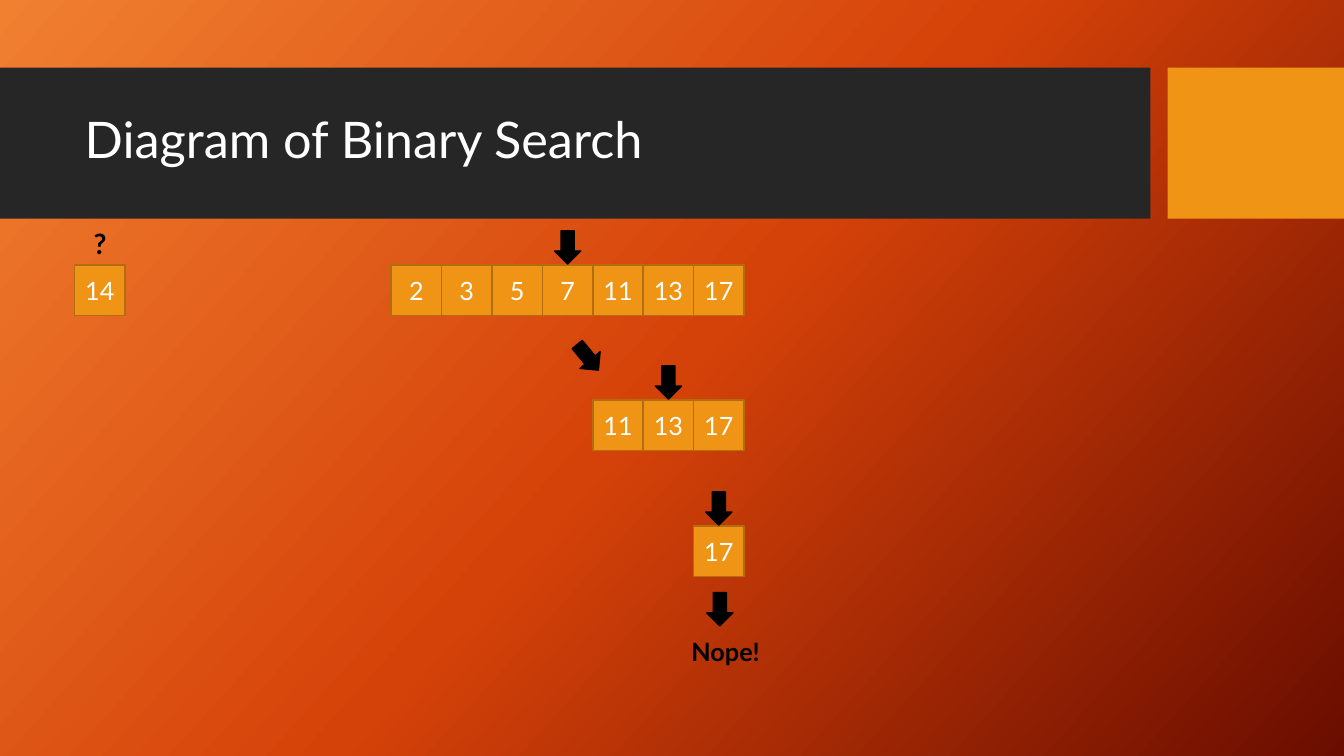
from copy import deepcopy

from pptx import Presentation
from pptx import util as u
from pptx.dml.color import RGBColor
from pptx.enum import shapes, text

PX = 9144
CELL = 50
ARRAY_LEFT = 388
FONT = "Lato"
WHITE = RGBColor(0xFF, 0xFF, 0xFF)
BLACK = RGBColor(0, 0, 0)
BAND = RGBColor(0x26, 0x26, 0x26)
ORANGE = RGBColor(0xF0, 0x94, 0x15)
CELL_EDGE = RGBColor(0xB2, 0x6D, 0x10)
GRADIENT = [
    (0, RGBColor(0xF1, 0x80, 0x31)),
    (0.5, RGBColor(0xD5, 0x42, 0x09)),
    (1, RGBColor(0x6A, 0x0D, 0x00)),
]
VALUES = [2, 3, 5, 7, 11, 13, 17]


def px(*lengths):
    """Turn pixel lengths into EMU."""
    return [u.Emu(length * PX) for length in lengths]


def paint_background(page):
    """Fill the page with the diagonal three-stop gradient."""
    fill = page.background.fill
    fill.gradient()
    fill.gradient_angle = 318
    stop_list = page.element.xpath(".//a:gsLst")[0]
    stop_list.append(deepcopy(stop_list[-1]))
    for stop, (position, color) in zip(fill.gradient_stops, GRADIENT):
        stop.position = position
        stop.color.rgb = color


def write(box, words, size=18, color=WHITE, bold=False, align=text.PP_ALIGN.LEFT,
          anchor=text.MSO_ANCHOR.TOP, wrap=True, spacing=None):
    """Put one formatted paragraph into a box."""
    frame = box.text_frame
    frame.word_wrap = wrap
    frame.auto_size = text.MSO_AUTO_SIZE.NONE
    frame.vertical_anchor = anchor
    para = frame.paragraphs[0]
    para.alignment = align
    para.line_spacing = spacing
    span = para.add_run()
    span.text = words
    span.font.name = FONT
    span.font.size = u.Pt(size)
    span.font.bold = bold
    span.font.color.rgb = color


def add_block(page, kind, left, top, width, height, fill, edge=None):
    """Draw a filled preset shape, outlined if an edge colour is given."""
    box = page.shapes.add_shape(kind, *px(left, top, width, height))
    box.shadow.inherit = False
    box.fill.solid()
    box.fill.fore_color.rgb = fill
    if edge is None:
        box.line.fill.background()
    else:
        box.line.color.rgb = edge
        box.line.width = u.Pt(1)
    return box


def add_cell(page, left, top, value):
    """Draw one numbered square."""
    box = add_block(page, shapes.MSO_SHAPE.RECTANGLE, left, top, CELL, CELL,
                    ORANGE, CELL_EDGE)
    frame = box.text_frame
    frame.margin_left = frame.margin_right = 0
    write(box, str(value), align=text.PP_ALIGN.CENTER,
          anchor=text.MSO_ANCHOR.MIDDLE)


def add_arrow(page, left, top, rotation=0):
    """Draw a black block arrow that points down before rotation."""
    arrow = add_block(page, shapes.MSO_SHAPE.DOWN_ARROW, left, top, 26, 33,
                      BLACK, BLACK)
    arrow.rotation = rotation


def add_search_step(page, first, top):
    """Draw the remaining values and mark the middle one."""
    for index in range(first, len(VALUES)):
        add_cell(page, ARRAY_LEFT + index * CELL, top, VALUES[index])
    middle = (first + len(VALUES) - 1) // 2
    add_arrow(page, ARRAY_LEFT + middle * CELL + 12, top - 34)


def add_label(page, left, top, width, height, words, **look):
    """Add a bold black text label."""
    box = page.shapes.add_textbox(*px(left, top, width, height))
    write(box, words, color=BLACK, bold=True, **look)


def add_title(page, words):
    """Draw the title bars and set the title on top of them."""
    for left, width, color in [(0, 1141, BAND), (1158, 175, ORANGE)]:
        add_block(page, shapes.MSO_SHAPE.RECTANGLE, left, 67, width, 150, color)
    title = page.shapes.title
    title.left, title.top, title.width, title.height = px(74, 82, 1051, 118)
    title.element.getparent().append(title.element)
    write(title, words, size=36, anchor=text.MSO_ANCHOR.MIDDLE, spacing=0.9)


def main():
    """Build the binary search slide."""
    deck = Presentation()
    deck.slide_width, deck.slide_height = px(1333, 750)
    page = deck.slides.add_slide(deck.slide_layouts[5])
    paint_background(page)
    add_title(page, "Diagram of Binary Search")
    add_label(page, 83, 220, 32, 44, "?", size=20, wrap=False)
    add_cell(page, 74, 263, 14)
    for first, top in [(0, 263), (4, 397), (6, 522)]:
        add_search_step(page, first, top)
    add_arrow(page, 570, 338, rotation=320.4)
    add_arrow(page, 701, 588)
    add_label(page, 676, 626, 162, 40, "Nope!")
    deck.save("out.pptx")


if __name__ == "__main__":
    main()
